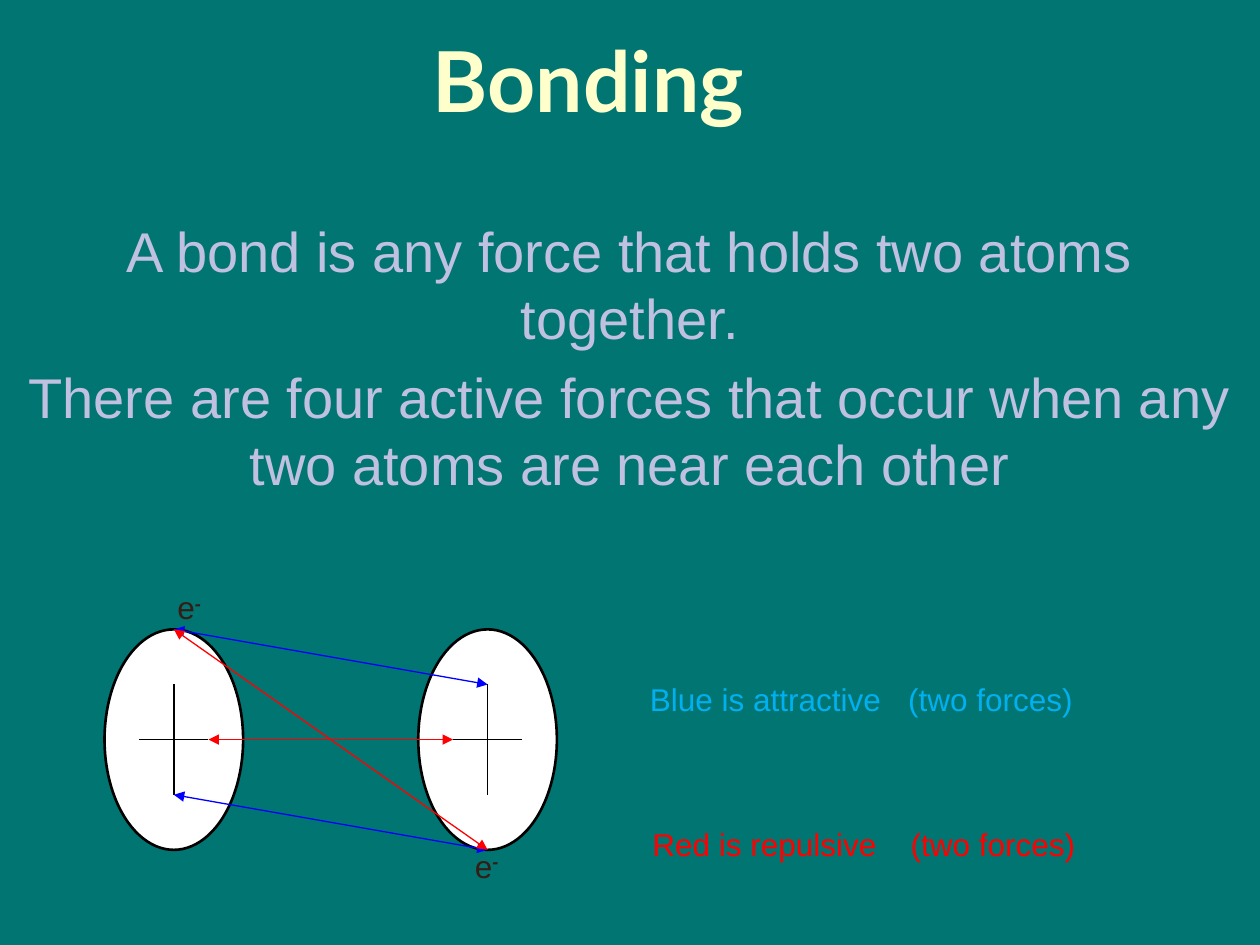
from dataclasses import dataclass
from lxml.etree import SubElement
from pptx import Presentation
from pptx.dml.color import RGBColor
from pptx.enum.shapes import MSO_CONNECTOR as Connector, MSO_SHAPE as Shape
from pptx.enum.text import MSO_ANCHOR as Anchor, PP_ALIGN as Align
from pptx.oxml.ns import qn
from pptx.util import Inches, Pt


@dataclass(frozen=True)
class Theme:
    background: str = "007572"
    title: str = "FFFFCC"
    body: str = "C0C1E1"
    electron: str = "351D15"
    white: str = "FFFFFF"
    black: str = "000000"
    attraction: str = "0000FF"
    attraction_label: str = "00B0F0"
    repulsion: str = "FF0000"
    title_font: str = "Lato"
    body_font: str = "Arial"
    title_size: int = 48
    body_size: int = 32
    label_size: int = 18


theme = Theme()
color = RGBColor.from_string

deck = Presentation()
deck.slide_width, deck.slide_height = Inches(10), Inches(7.5)
page = deck.slides.add_slide(deck.slide_layouts[6])
page.background.fill.solid()
page.background.fill.fore_color.rgb = color(theme.background)


def add_text(place, paragraphs, size, ink, font=theme.body_font,
             align=Align.LEFT, anchor=Anchor.TOP, before=0):
    """Add a text box; each paragraph is a list of runs. Return the runs."""
    box = page.shapes.add_textbox(*map(Inches, place))
    frame = box.text_frame
    frame.word_wrap = True
    frame.vertical_anchor = anchor
    spans = []
    for index, texts in enumerate(paragraphs):
        para = frame.add_paragraph() if index else frame.paragraphs[0]
        para.alignment = align
        para.space_before = Pt(before)
        for text in texts:
            span = para.add_run()
            span.text = text
            span.font.name, span.font.size = font, Pt(size)
            span.font.color.rgb = color(ink)
            spans.append(span)
    return spans


def add_line(group, start, end, ink, width, arrows=False):
    line = group.shapes.add_connector(
        Connector.STRAIGHT, *map(Inches, (*start, *end)))
    line.line.color.rgb = color(ink)
    line.line.width = Pt(width)
    if arrows:
        outline = line.line._get_or_add_ln()
        for tip in ("a:headEnd", "a:tailEnd"):
            SubElement(outline, qn(tip), type="triangle")
    SubElement(line._element.spPr, qn("a:effectLst"))


# Title and definition
title, = add_text((0.42, 0, 8.5, 1.25), [["Bonding"]], theme.title_size,
                  theme.title, theme.title_font, Align.CENTER, Anchor.MIDDLE)
title.font.bold = True
add_text((0, 1.67, 10, 2.67),
         [["A bond is any force that holds two atoms together."],
          ["There are four active forces that occur when any two atoms "
           "are near each other"]],
         theme.body_size, theme.body, align=Align.CENTER,
         before=0.2 * theme.body_size)

# Two atoms, each with a plus sign half its size at the nucleus
left_x, right_x, center_y = 1.38, 3.87, 5.87
radius_x, radius_y = 0.55, 0.875
arm_x, arm_y = radius_x / 2, radius_y / 2
diagram = page.shapes.add_group_shape()
for x in (left_x, right_x):
    atom = diagram.shapes.add_shape(
        Shape.OVAL, Inches(x - radius_x), Inches(center_y - radius_y),
        Inches(2 * radius_x), Inches(2 * radius_y))
    atom.shadow.inherit = False
    atom.fill.solid()
    atom.fill.fore_color.rgb = color(theme.white)
    atom.line.color.rgb = color(theme.black)
    atom.line.width = Pt(1.5)
for x in (left_x, right_x):
    add_line(diagram, (x, center_y - arm_y), (x, center_y + arm_y),
             theme.black, 1)
    add_line(diagram, (x - arm_x, center_y), (x + arm_x, center_y),
             theme.black, 1)

# Forces between electrons and nuclei
left_electron = (left_x, center_y - radius_y)
right_electron = (right_x, center_y + radius_y)
for start, end, ink in (
    (left_electron, (right_x, center_y - arm_y), theme.attraction),
    (right_electron, (left_x, center_y + arm_y), theme.attraction),
    ((left_x + arm_x, center_y), (right_x - arm_x, center_y), theme.repulsion),
    (left_electron, right_electron, theme.repulsion),
):
    add_line(diagram, start, end, ink, 0.75, arrows=True)

# Legend, with the counts aligned at a tab stop
for place, texts, ink in (
    ((5.06, 5.35, 4.67, 0.4), ["Blue is attractive", "\t(two forces)"],
     theme.attraction_label),
    ((5.08, 6.5, 3.56, 0.4), ["Red is repulsive", "\t(two forces)"],
     theme.repulsion),
):
    spans = add_text(place, [texts], theme.label_size, ink,
                     anchor=Anchor.MIDDLE)
    properties = spans[0]._r.getparent().get_or_add_pPr()
    tabs = SubElement(properties, qn("a:tabLst"))
    SubElement(tabs, qn("a:tab"), pos=str(Inches(2.05)), algn="l")

# Electron labels
for left, top in ((3.67, 6.67), (1.31, 4.62)):
    _, charge = add_text((left, top, 0.56, 0.4), [["e", "-"]],
                         theme.label_size, theme.electron)
    charge.font.bold = charge.font.italic = True
    charge._r.get_or_add_rPr().set("baseline", "30000")

deck.save("out.pptx")
